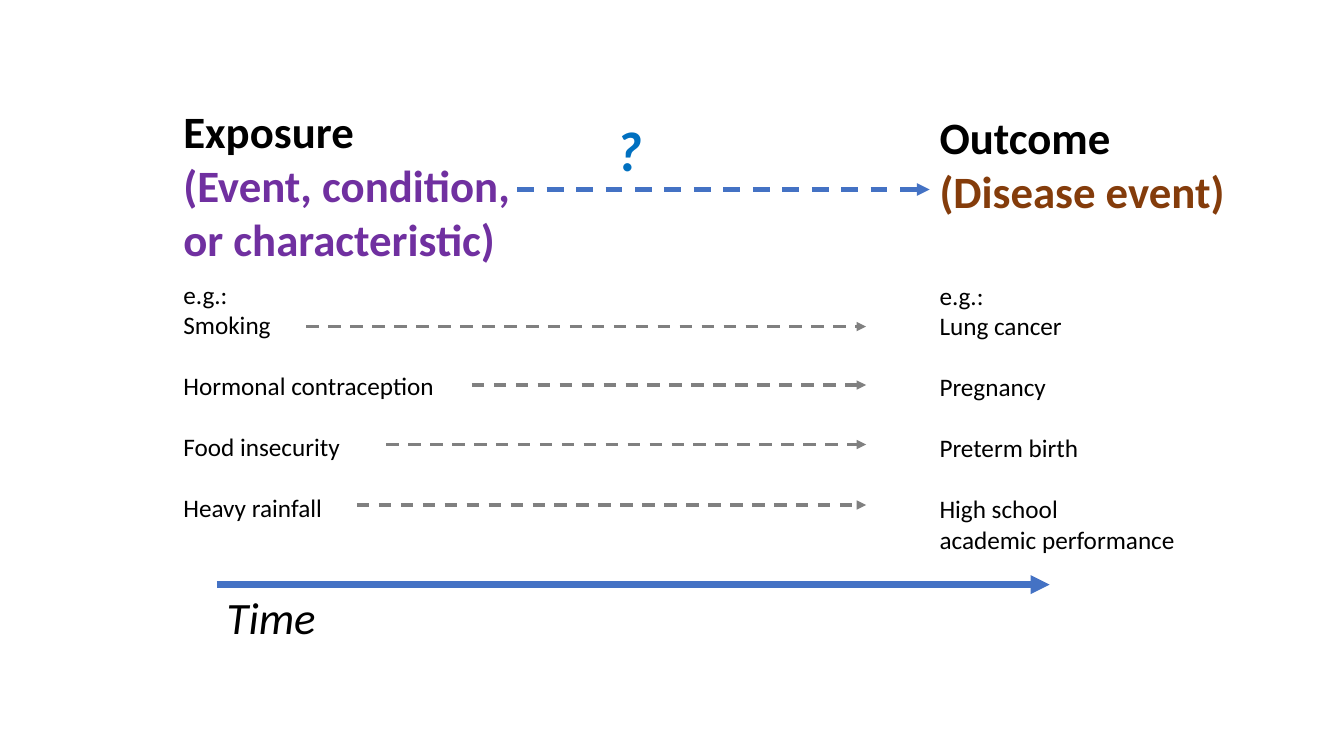
from pptx import Presentation
from pptx.dml.color import RGBColor
from pptx.enum.dml import MSO_LINE
from pptx.enum.shapes import MSO_CONNECTOR
from pptx.enum.text import MSO_AUTO_SIZE
from pptx.util import Pt
from lxml.etree import SubElement
from pptx.oxml.ns import qn

PX = 9144  # 100 px to the inch
COLORS = {
    "black": "000000",
    "purple": "7030A0",
    "brown": "843C0B",
    "blue": "4472C4",
    "question": "0070C0",
    "gray": "808080",
}
BLANK_LINE = 22  # points between example pairs


def add_text(left, top, width, height, lines):
    """Add an unwrapped box; each line is (text, size, color, style, space before)."""
    box = slide.shapes.add_textbox(left * PX, top * PX, width * PX, height * PX)
    frame = box.text_frame
    frame.word_wrap = False
    frame.auto_size = MSO_AUTO_SIZE.SHAPE_TO_FIT_TEXT
    for index, (text, size, color, style, space) in enumerate(lines):
        paragraph = frame.add_paragraph() if index else frame.paragraphs[0]
        paragraph.text = text
        paragraph.space_before = Pt(space)
        font = paragraph.font
        font.name = "Calibri"
        font.size = Pt(size)
        font.bold = "b" in style
        font.italic = "i" in style
        font.color.rgb = RGBColor.from_string(COLORS[color])


def add_arrow(start, end, y, color, width, dashed=True):
    arrow = slide.shapes.add_connector(
        MSO_CONNECTOR.STRAIGHT, start * PX, y * PX, end * PX, y * PX)
    arrow.line.color.rgb = RGBColor.from_string(COLORS[color])
    arrow.line.width = Pt(width)
    if dashed:
        arrow.line.dash_style = MSO_LINE.DASH
    SubElement(arrow.line._get_or_add_ln(), qn("a:tailEnd"), type="triangle")
    SubElement(arrow._element.spPr, qn("a:effectLst"))


presentation = Presentation()
presentation.slide_width = 1333 * PX
presentation.slide_height = 750 * PX
slide = presentation.slides.add_slide(presentation.slide_layouts[6])

# Exposure and outcome columns: box, heading, subtitle, subtitle color,
# gap above the examples, examples as (text, space before)
columns = [
    ((172, 98, 348, 427), "Exposure", "(Event, condition,\nor characteristic)", "purple", 10,
     [("Smoking", 0), ("Hormonal contraception", BLANK_LINE),
      ("Food insecurity", BLANK_LINE), ("Heavy rainfall", BLANK_LINE)]),
    ((922, 104, 306, 453), "Outcome", "(Disease event)", "brown", 45,
     [("Lung cancer", 0), ("Pregnancy", BLANK_LINE), ("Preterm birth", BLANK_LINE),
      ("High school", BLANK_LINE), ("academic performance", 0)]),
]
for box, heading, subtitle, color, gap, examples in columns:
    lines = [(heading, 32, "black", "b", 0), (subtitle, 32, color, "b", 0)]
    lines += [(text, 18, "black", "", space) for text, space in [("e.g.:", gap), *examples]]
    add_text(*box, lines)

# Time axis
add_arrow(215, 1041, 580, "blue", 4.5, dashed=False)
add_text(215, 580, 109, 64, [("Time", 32, "black", "i", 0)])

# Questioned link between exposure and outcome
add_arrow(513, 922, 188, "blue", 3)
add_text(601, 110, 46, 77, [("?", 40, "question", "bi", 0)])

# Links between the example pairs
for start, y in [(304, 324), (468, 382), (383, 441), (354, 501)]:
    add_arrow(start, 859, y, "gray", 2.25)

presentation.save("out.pptx")
